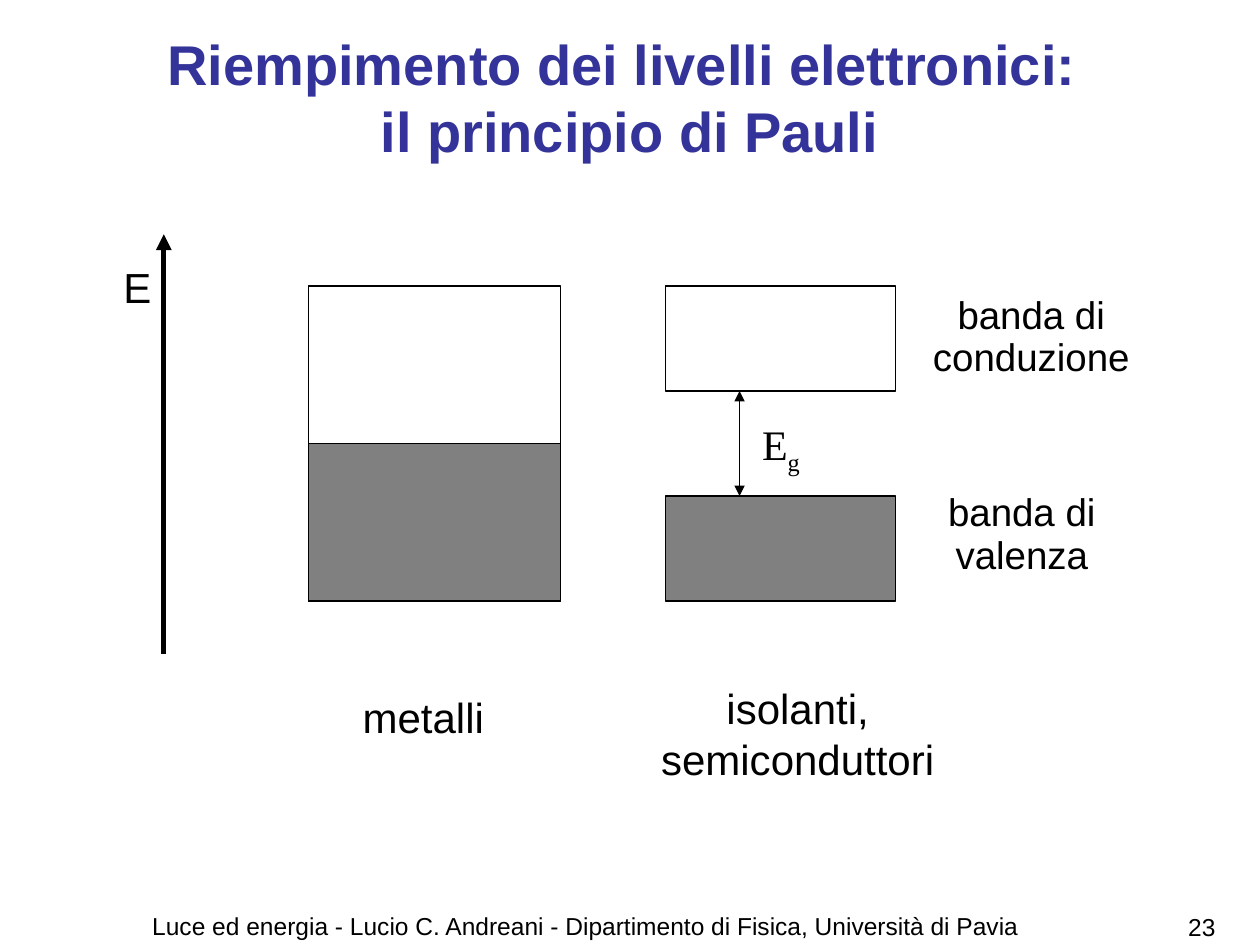
from lxml import etree
from pptx import Presentation
from pptx import util as u
from pptx.dml.color import RGBColor
from pptx.enum import shapes, text
from pptx.oxml.ns import qn

COLORS = {"ink": "000000", "title": "333399", "filled": "808080"}
ALIGN = text.PP_ALIGN


def color(name):
    return RGBColor.from_string(COLORS[name])


def write(shape, lines, size=24, font="Arial", ink="ink", bold=False,
          align=ALIGN.LEFT, anchor=text.MSO_ANCHOR.TOP, spacing=None, before=0):
    frame = shape.text_frame
    frame.word_wrap = True
    frame.auto_size = text.MSO_AUTO_SIZE.NONE
    frame.vertical_anchor = anchor
    for index, line in enumerate(lines):
        paragraph = frame.paragraphs[0] if index == 0 else frame.add_paragraph()
        paragraph.text = line
        paragraph.alignment = align
        if spacing:
            paragraph.line_spacing = spacing
        if index and before:
            paragraph.space_before = u.Pt(before)
        for run in paragraph.runs:
            run.font.size = u.Pt(size)
            run.font.name = font
            run.font.bold = bold
            run.font.color.rgb = color(ink)
    return frame.paragraphs[0]


def add_label(slide, box, lines, **formatting):
    shape = slide.shapes.add_textbox(*map(u.Inches, box))
    return write(shape, lines, **formatting)


def add_band(slide, box, fill=None):
    shape = slide.shapes.add_shape(shapes.MSO_SHAPE.RECTANGLE, *map(u.Inches, box))
    shape.shadow.inherit = False
    if fill:
        shape.fill.solid()
        shape.fill.fore_color.rgb = color(fill)
    else:
        shape.fill.background()
    shape.line.color.rgb = color("ink")
    shape.line.width = u.Pt(0.75)


def add_arrow(slide, start, end, width, ends):
    connector = slide.shapes.add_connector(
        shapes.MSO_CONNECTOR.STRAIGHT, *map(u.Inches, (*start, *end)))
    connector.line.color.rgb = color("ink")
    connector.line.width = u.Pt(width)
    line = connector.line._get_or_add_ln()
    for end_name in ends:
        etree.SubElement(line, qn(f"a:{end_name}"), type="triangle")
    etree.SubElement(connector._element.spPr, qn("a:effectLst"))


def build_title(slide, box):
    title = slide.shapes.title
    title.left, title.top, title.width, title.height = map(u.Inches, box)
    write(title, ["Riempimento dei livelli elettronici: \vil principio di Pauli"],
          size=32, ink="title", bold=True, align=ALIGN.CENTER,
          anchor=text.MSO_ANCHOR.MIDDLE)


def build_energy_axis(slide, box):
    left, top, width, height = box
    right = left + width
    add_arrow(slide, (right, top + height), (right, top), 3, ["tailEnd"])
    add_label(slide, (left, top + 0.17, width, 0.5), ["E"])


def build_metals(slide, box):
    left, top, width, height = box
    add_band(slide, box)
    add_band(slide, (left, top + height / 2, width, height / 2), "filled")
    add_label(slide, (left + 0.33, top + height + 0.67, 1.33, 0.5), ["metalli"])


def build_insulators(slide, box):
    left, top, width, height = box
    band = height / 3
    valence_top = top + 2 * band
    add_band(slide, (left, valence_top, width, band), "filled")
    add_band(slide, (left, top, width, band))
    gap_x = left + 0.59
    add_arrow(slide, (gap_x, valence_top), (gap_x, top + band), 0.75,
              ["headEnd", "tailEnd"])
    paragraph = add_label(slide, (gap_x + 0.08, top + band + 0.17, 0.92, 0.5),
                          ["E"], font="Times New Roman")
    subscript = paragraph.add_run()
    subscript.text = "g"
    subscript.font.size = u.Pt(24)
    subscript.font.name = "Times New Roman"
    subscript.font.color.rgb = color("ink")
    subscript.font._element.set("baseline", "-25000")
    add_label(slide, (left - 0.16, top + height + 0.6, 2.42, 0.9),
              ["isolanti, semiconduttori"], align=ALIGN.CENTER)
    band_labels = [((7.2, top + 0.15, 1.97, 0.65), "conduzione"),
                   ((7.36, valence_top + 0.05, 1.5, 0.65), "valenza")]
    for label_box, name in band_labels:
        add_label(slide, label_box, ["banda di", name], size=22,
                  align=ALIGN.CENTER, spacing=0.5, before=11)


def build_footer(slide, box):
    left, top, width, height = box
    add_label(slide, (left, top, 8.9, height),
              ["Luce ed energia - Lucio C. Andreani - "
               "Dipartimento di Fisica, Università di Pavia"],
              size=14, align=ALIGN.CENTER)
    add_label(slide, (left + width - 0.48, top + 0.01, 0.48, height), ["23 "],
              size=14, align=ALIGN.RIGHT)


def main():
    presentation = Presentation()
    presentation.slide_width = u.Inches(10)
    presentation.slide_height = u.Inches(7.5)
    slide = presentation.slides.add_slide(presentation.slide_layouts[5])
    build_title(slide, (0.5, 0.3, 9, 0.93))
    build_energy_axis(slide, (0.88, 1.86, 0.42, 3.33))
    build_metals(slide, (2.45, 2.27, 2, 2.5))
    build_insulators(slide, (5.28, 2.27, 1.83, 2.5))
    build_footer(slide, (0.2, 7.18, 9.6, 0.36))
    presentation.save("out.pptx")


if __name__ == "__main__":
    main()
